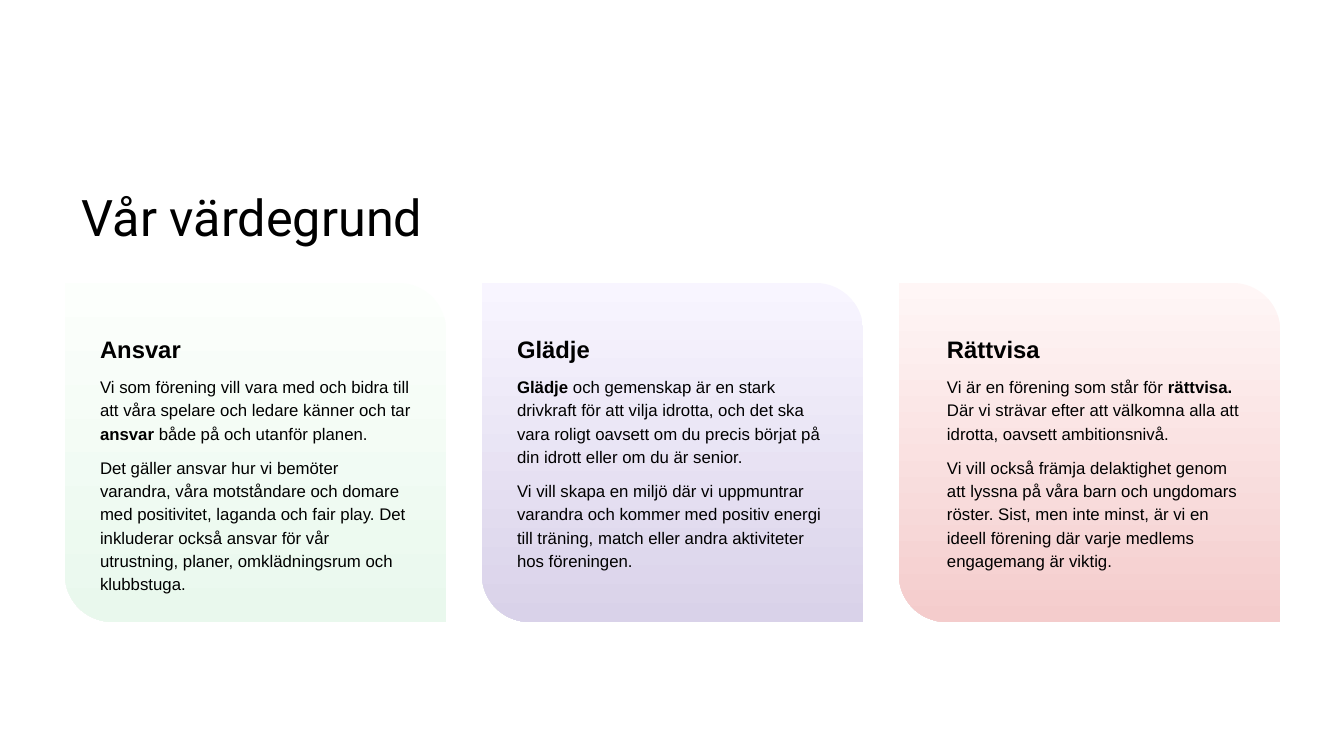
from pptx import Presentation
from pptx.dml.color import RGBColor
from pptx.enum.shapes import MSO_SHAPE as Preset
from pptx.enum.text import MSO_ANCHOR as Anchor, MSO_AUTO_SIZE as AutoSize
from pptx.util import Pt

PX = 914400 / 100.8  # EMU per px
SLIDE_W, SLIDE_H = 1344, 756
CARD_W, CARD_H, CARD_STEP = 381, 339, 417
BLACK = "000000"

# Heading, gradient from top to bottom, text inset, paragraphs (** marks bold)
VALUES = [
    ("Ansvar", ("FCFFFC", "E9F8ED"), 25, [
        "Vi som förening vill vara med och bidra till att våra spelare och ledare "
        "känner och tar **ansvar** både på och utanför planen.",
        "Det gäller ansvar hur vi bemöter varandra, våra motståndare och domare med "
        "positivitet, laganda och fair play. Det inkluderar också ansvar för vår "
        "utrustning, planer, omklädningsrum och klubbstuga."]),
    ("Glädje", ("F8F5FF", "D9D2E9"), 25, [
        "**Glädje** och gemenskap är en stark drivkraft för att vilja idrotta, och det "
        "ska vara roligt oavsett om du precis börjat på din idrott eller om du är senior.",
        "Vi vill skapa en miljö där vi uppmuntrar varandra och kommer med positiv energi "
        "till träning, match eller andra aktiviteter hos föreningen."]),
    ("Rättvisa", ("FFF6F6", "F4CCCC"), 38, [
        "Vi är en förening som står för **rättvisa.** Där vi strävar efter att välkomna "
        "alla att idrotta, oavsett ambitionsnivå.",
        "Vi vill också främja delaktighet genom att lyssna på våra barn och ungdomars "
        "röster. Sist, men inte minst, är vi en ideell förening där varje medlems "
        "engagemang är viktig."]),
]


def px(*lengths):
    return [round(length * PX) for length in lengths]


def color(hex_code):
    return RGBColor.from_string(hex_code)


def set_all(target, formats):
    for name, value in formats.items():
        setattr(target, name, value)


def add_text_frame(slide, box, inset_x, inset_y):
    frame = slide.shapes.add_textbox(*px(*box)).text_frame
    side, end = px(inset_x, inset_y)
    set_all(frame, {"word_wrap": True, "auto_size": AutoSize.NONE,
                    "vertical_anchor": Anchor.TOP,
                    "margin_left": side, "margin_right": side,
                    "margin_top": end, "margin_bottom": end})
    return frame


def write(paragraph, text, font, size, **spacing):
    """Fill a paragraph; every second part between ** marks is bold."""
    set_all(paragraph, spacing)
    for index, part in enumerate(text.split("**")):
        if part:
            run = paragraph.add_run()
            run.text = part
            set_all(run.font, {"name": font, "size": Pt(size), "bold": index % 2 == 1})
            run.font.color.rgb = color(BLACK)


def add_title(slide, box):
    frame = add_text_frame(slide, box, 10, 5)
    write(frame.paragraphs[0], "Vår värdegrund", "Roboto", 36)


def add_value_card(slide, box, heading, shades, inset, paragraphs):
    left, top, width, height = box

    # Card with two rounded corners
    card = slide.shapes.add_shape(Preset.ROUND_2_DIAG_RECTANGLE, *px(*box))
    card.shadow.inherit = False
    card.adjustments[0], card.adjustments[1] = 0, 0.14
    card.line.fill.background()
    card.fill.gradient()
    card.fill.gradient_angle = 270
    for position, (stop, shade) in enumerate(zip(card.fill.gradient_stops, shades)):
        stop.position = position
        stop.color.rgb = color(shade)

    # Heading and body
    text_box = (left + inset, top + 39, width - 2 * 25 - (inset - 25), height - 54)
    frame = add_text_frame(slide, text_box, 10, 10)
    write(frame.paragraphs[0], f"**{heading}**", "Arial", 17, line_spacing=1.08)
    for body in paragraphs:
        write(frame.add_paragraph(), body, "Arial", 12,
              line_spacing=1.15, space_before=Pt(8))


def build_slide(deck):
    slide = deck.slides.add_slide(deck.slide_layouts[6])
    add_title(slide, (72, 181, 1219, 104))
    for column, value in enumerate(VALUES):
        add_value_card(slide, (65 + column * CARD_STEP, 283, CARD_W, CARD_H), *value)


def main():
    deck = Presentation()
    deck.slide_width, deck.slide_height = px(SLIDE_W, SLIDE_H)
    build_slide(deck)
    deck.save("out.pptx")


if __name__ == "__main__":
    main()
